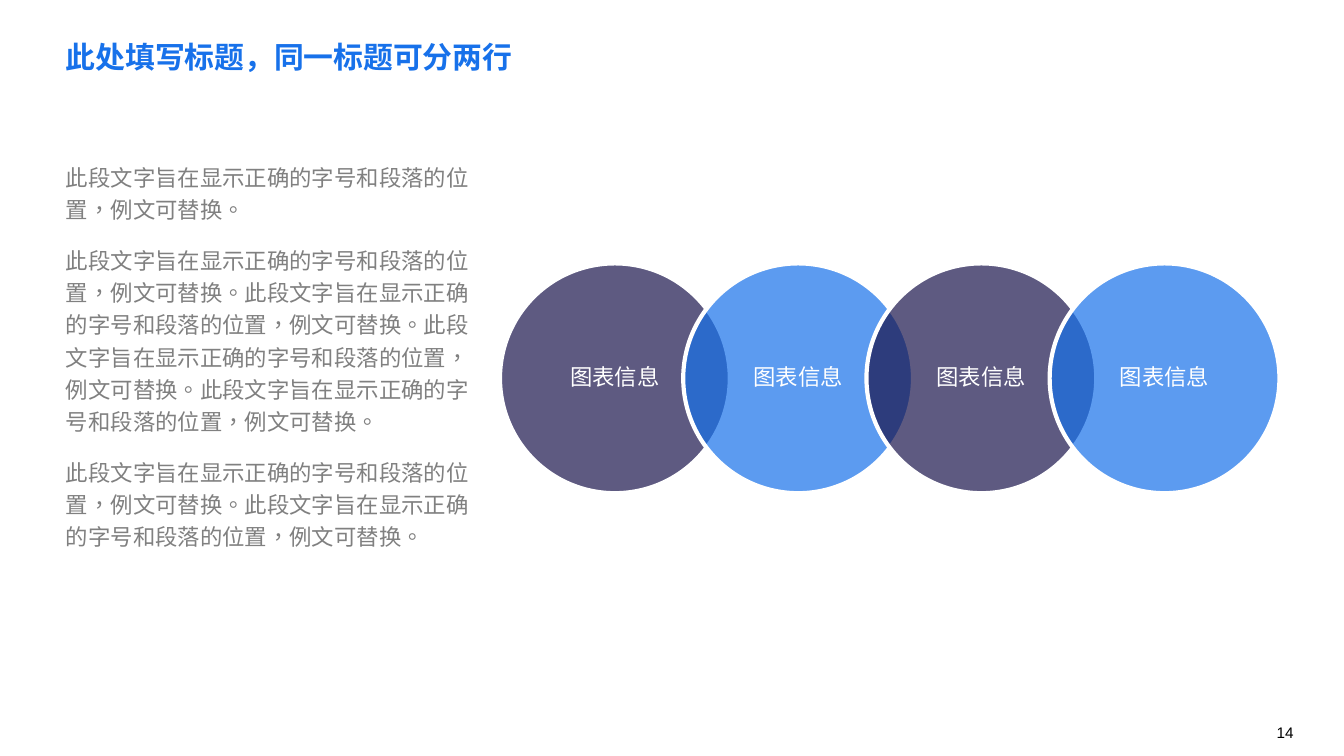
from dataclasses import dataclass

from pptx import Presentation
from pptx import util as u
from pptx.dml.color import RGBColor
from pptx.enum import shapes, text
from pptx.oxml import ns, xmlchemy

CJK = "Noto Sans CJK SC"
NAVY, BLUE, GRAY, WHITE, BLACK = "1A154C", "1771EA", "808080", "FFFFFF", "000000"
SAMPLE = "此段文字旨在显示正确的字号和段落的位置，例文可替换。"


@dataclass
class Area:
    left: float
    top: float
    width: float
    height: float


@dataclass
class Circle:
    label: str
    color: str


def rgb(value: str) -> RGBColor:
    return RGBColor.from_string(value)


def write(frame, paragraphs: list[str], *, size: float, color: str, font: str = CJK,
          bold: bool = False, lang: str = "zh-CN", spacing: float = 1.0,
          gap: float = 0, align=text.PP_ALIGN.LEFT,
          anchor=text.MSO_ANCHOR.TOP, margins: tuple[float, float] = (0, 0)) -> None:
    """Fill a text frame with evenly formatted paragraphs."""
    frame.word_wrap = True
    frame.vertical_anchor = anchor
    frame.margin_left = frame.margin_right = u.Inches(margins[0])
    frame.margin_top = frame.margin_bottom = u.Inches(margins[1])
    for index, content in enumerate(paragraphs):
        para = frame.add_paragraph() if index else frame.paragraphs[0]
        para.alignment = align
        para.line_spacing = spacing
        para.space_before = u.Pt(gap if index else 0)
        span = para.add_run()
        span.text = content
        span.font.size = u.Pt(size)
        span.font.bold = bold
        span.font.color.rgb = rgb(color)
        span.font.name = font
        # East Asian typeface and language
        properties = span.font._element
        properties.set("lang", lang)
        east_asian = xmlchemy.OxmlElement("a:ea")
        east_asian.set("typeface", font)
        properties.find(ns.qn("a:latin")).addnext(east_asian)


def add_text(page, area: Area, paragraphs: list[str], **style) -> None:
    box = page.shapes.add_textbox(u.Inches(area.left), u.Inches(area.top),
                                  u.Inches(area.width), u.Inches(area.height))
    write(box.text_frame, paragraphs, **style)


def add_circle(page, circle: Circle, left: float, top: float, diameter: float) -> None:
    oval = page.shapes.add_shape(shapes.MSO_SHAPE.OVAL, u.Inches(left), u.Inches(top),
                                 u.Inches(diameter), u.Inches(diameter))
    oval.shadow.inherit = False
    oval.fill.solid()
    oval.fill.fore_color.rgb = rgb(circle.color)
    # 70% opacity
    alpha = xmlchemy.OxmlElement("a:alpha")
    alpha.set("val", "70000")
    oval._element.spPr.find(ns.qn("a:solidFill"))[0].append(alpha)
    oval.line.color.rgb = rgb(WHITE)
    oval.line.width = u.Pt(2.25)
    write(oval.text_frame, [circle.label], size=12, color=WHITE, spacing=0.9,
          align=text.PP_ALIGN.CENTER, anchor=text.MSO_ANCHOR.MIDDLE,
          margins=(0.1, 0.1))


def main() -> None:
    # Widescreen 16:9 page
    deck = Presentation()
    deck.slide_width = u.Inches(10)
    deck.slide_height = deck.slide_width * 9 // 16
    page = deck.slides.add_slide(deck.slide_layouts[6])

    # Page number and title
    add_text(page, Area(9.5, 5.38, 0.5, 0.14), ["14"], size=8.2, color=BLACK,
             font="Arial", anchor=text.MSO_ANCHOR.MIDDLE)
    add_text(page, Area(0.49, 0.29, 8.04, 0.57), ["此处填写标题，同一标题可分两行"],
             size=16, color=BLUE, bold=True)

    # Overlapping circles, evenly spread between the first and last left edges
    first, last = 3.72, 7.81
    circles = [Circle("图表信息", color) for color in (NAVY, BLUE) * 2]
    step = (last - first) / (len(circles) - 1)
    for index, circle in enumerate(circles):
        add_circle(page, circle, first + index * step, 1.96, 1.71)

    # Body text
    add_text(page, Area(0.49, 1.18, 3.01, 4.01), [SAMPLE * count for count in (1, 4, 2)],
             size=12, color=GRAY, lang="zh-TW", spacing=1.2, gap=10)

    deck.save("out.pptx")


if __name__ == "__main__":
    main()
